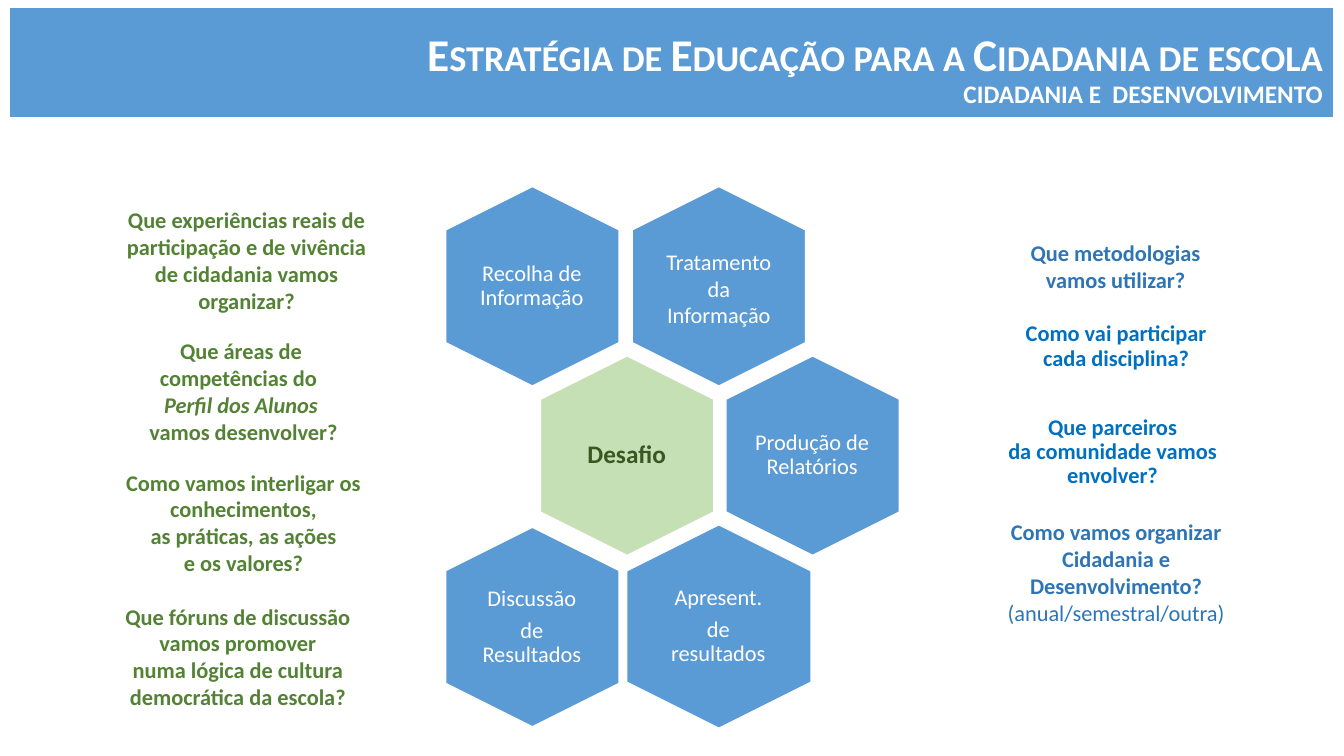
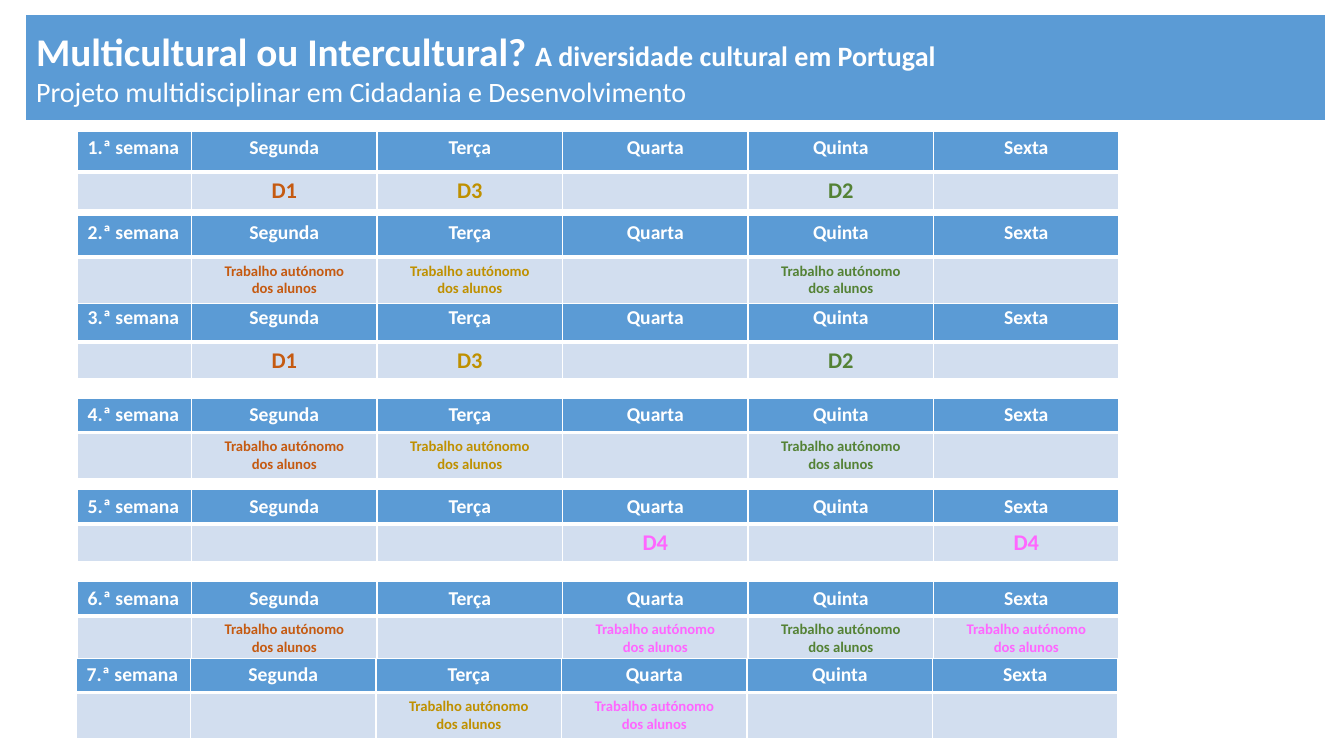
import lxml.etree
import pptx
import pptx.dml.color
import pptx.enum.shapes
import pptx.enum.text
import pptx.oxml.ns
import pptx.util

RGB = pptx.dml.color.RGBColor
ALIGN = pptx.enum.text.PP_ALIGN
ANCHOR = pptx.enum.text.MSO_ANCHOR
SHAPE = pptx.enum.shapes.MSO_SHAPE
qn = pptx.oxml.ns.qn

SCALE = 9144
FONT = "Calibri"

WHITE = RGB(0xFF, 0xFF, 0xFF)
BLUE = RGB(0x5B, 0x9B, 0xD5)
PALE = RGB(0xD2, 0xDE, 0xEF)
NAVY = RGB(0x2E, 0x75, 0xB6)
AZURE = RGB(0x00, 0x70, 0xC0)
MINT = RGB(0xC5, 0xE0, 0xB4)
DARK = RGB(0x38, 0x57, 0x23)
GREEN = RGB(0x54, 0x82, 0x35)
RUST = RGB(0xC5, 0x5A, 0x11)
GOLD = RGB(0xBF, 0x90, 0x00)
PINK = RGB(0xFF, 0x66, 0xFF)

GROUPS = {"D1": RUST, "D2": GREEN, "D3": GOLD, "D4": PINK}
DAYS = ["Segunda", "Terça", "Quarta", "Quinta", "Sexta"]
WORK = "Trabalho autónomo\vdos alunos"
COLS = [113] + [184] * len(DAYS)

WEEKS = [
    (3, 77, 298, 41, False, ("D1", "D3", "", "D2", "")),
    (4, 77, 395, 34, True, ("D1", "D3", "", "D2", "")),
    (5, 77, 486, 34, False, ("", "", "D4", "", "D4")),
    (6, 77, 577, 34, True, ("D1", "", "D4", "D2", "D4")),
    (7, 76, 653, 34, True, ("", "D3", "D4", "", "")),
    (2, 77, 214, 41, True, ("D1", "D3", "", "D2", "")),
    (1, 77, 130, 41, False, ("D1", "D3", "", "D2", "")),
]

CELLS = [
    (429, 198, 198, 172, ["Recolha de Informação"]),
    (707, 366, 198, 172, ["Produção de Relatórios"]),
    (612, 530, 202, 183, ["Apresent.", "de resultados"]),
    (429, 536, 198, 172, ["Discussão", "de Resultados"]),
]

ASKS = [
    (115, 200, 259, 118, GREEN, [
        "Que experiências reais de participação e de vivência "
        "de cidadania vamos organizar?"]),
    (115, 460, 253, 118, GREEN, [
        "Como vamos interligar os conhecimentos,",
        "as práticas, as ações", "e os valores?"]),
    (103, 593, 266, 118, GREEN, [
        "Que fóruns de discussão vamos promover\v"
        "numa lógica de cultura democrática da escola?"]),
    (1000, 232, 213, 64, NAVY, ["Que metodologias vamos utilizar?"]),
]

TIGHT = [
    (1000, 316, 214, 56, ["Como vai participar cada disciplina?"]),
    (993, 389, 221, 119, ["Que parceiros\vda comunidade vamos envolver?"]),
]


def px(num):
    return pptx.util.Emu(num * SCALE)


def box(x, y, w, h):
    return px(x), px(y), px(w), px(h)


def style(run, size, color, bold=False):
    run.font.name = FONT
    run.font.size = pptx.util.Pt(size)
    run.font.bold = bold
    run.font.color.rgb = color


def write(frame, lines, size, color, bold=False, align=ALIGN.CENTER):
    for num, line in enumerate(lines):
        para = frame.add_paragraph() if num else frame.paragraphs[0]
        para.text = line
        para.alignment = align
        for run in para.runs:
            style(run, size, color, bold)


def label(slide, area, lines, size, color, bold=False, inset=None):
    frame = slide.shapes.add_textbox(*box(*area)).text_frame
    frame.word_wrap = True
    write(frame, lines, size, color, bold)
    if inset is not None:
        frame.vertical_anchor = ANCHOR.MIDDLE
        frame.margin_left = frame.margin_right = px(inset)
        frame.margin_top = frame.margin_bottom = px(inset)
        for para in frame.paragraphs:
            para.line_spacing = 0.9
            para.space_after = pptx.util.Pt(size * 0.35)
    return frame


def solid(slide, kind, area, fill):
    shape = slide.shapes.add_shape(kind, *box(*area))
    shape.shadow.inherit = False
    shape.fill.solid()
    shape.fill.fore_color.rgb = fill
    shape.line.fill.background()
    return shape


def band(slide, area, rows, align):
    frame = solid(slide, SHAPE.RECTANGLE, area, BLUE).text_frame
    frame.word_wrap = True
    frame.vertical_anchor = ANCHOR.MIDDLE
    for num, row in enumerate(rows):
        para = frame.add_paragraph() if num else frame.paragraphs[0]
        para.alignment = align
        for text, size, bold in row:
            run = para.add_run()
            run.text = text
            style(run, size, WHITE, bold)
    return frame


def comb(slide, x, y, w, h, fill):
    shape = solid(slide, SHAPE.HEXAGON, (x, y, w, h), fill)
    shape.adjustments[0] = 0.25
    shape.adjustments[1] = 1.1547
    shape.rotation = 90
    shape.line.color.rgb = WHITE
    shape.line.width = pptx.util.Pt(1)


def inner(x, y, w, h):
    wide, tall = 115, 136
    return x + (w - wide) // 2, y + (h - tall) // 2, wide, tall


def edge(cell, base):
    props = cell._tc.get_or_add_tcPr()
    sides = [("L", 1), ("R", 1), ("T", 1), ("B", base)]
    for num, (side, width) in enumerate(sides):
        line = lxml.etree.Element(qn("a:ln" + side), w=str(width * 12700))
        fill = lxml.etree.SubElement(line, qn("a:solidFill"))
        lxml.etree.SubElement(fill, qn("a:srgbClr"), val=str(WHITE))
        props.insert(num, line)


def paint(cell, fill, base, text, size, color, align):
    cell.fill.solid()
    cell.fill.fore_color.rgb = fill
    edge(cell, base)
    write(cell.text_frame, [text], size, color, True, align)
    if not text:
        para = cell.text_frame.paragraphs[0]._p
        lxml.etree.SubElement(para, qn("a:endParaRPr"), sz="1050")


def week(slide, num, x, y, head, alone, plan):
    rows = [head, 46 if alone else 37]
    area = box(x, y, sum(COLS), sum(rows))
    table = slide.shapes.add_table(2, len(COLS), *area).table
    table.horz_banding = False
    for col, width in zip(table.columns, COLS):
        col.width = px(width)
    for row, height in zip(table.rows, rows):
        row.height = px(height)
    for col, name in enumerate([f"{num}.ª semana"] + DAYS):
        align = ALIGN.CENTER if col else ALIGN.LEFT
        paint(table.cell(0, col), BLUE, 3, name, 14, WHITE, align)
    for col, group in enumerate(("",) + plan):
        text = WORK if alone and group else group
        color = GROUPS.get(group, WHITE)
        size = 10.5 if alone else 16
        paint(table.cell(1, col), PALE, 1, text, size, color, ALIGN.CENTER)


def ideas(slide):
    frame = band(slide, (10, 8, 1312, 108), [
        [("Estratégia de Educação para a Cidadania de escola", 32.4, True)],
        [("CIDADANIA E  DESENVOLVIMENTO", 18, True)],
    ], ALIGN.RIGHT)
    frame.margin_top = px(21)
    for para in frame.paragraphs:
        para.line_spacing = 0.9
    frame.paragraphs[0].runs[0].font._element.set("cap", "small")

    comb(slide, 614, 198, 198, 172, BLUE)
    for *area, lines in CELLS:
        comb(slide, *area, BLUE)
        label(slide, inner(*area), lines, 16, WHITE, inset=0)
    core = (523, 366, 198, 172)
    comb(slide, *core, MINT)
    label(slide, inner(*core), ["Desafio"], 18, DARK, True, 0)
    label(slide, (640, 241, 146, 120), ["Tratamento da Informação"], 16, WHITE)

    for *area, lines in TIGHT:
        label(slide, area, lines, 16, AZURE, True, 6)
    for *area, color, lines in ASKS:
        label(slide, area, lines, 16, color, True)
    skills = label(slide, (103, 330, 272, 118), [
        "Que áreas de competências do ", "Perfil dos Alunos",
        " vamos desenvolver?"], 16, GREEN, True)
    skills.paragraphs[1].runs[0].font.italic = True
    terms = label(slide, (986, 509, 242, 118), [
        "Como vamos organizar Cidadania e Desenvolvimento?",
        "(anual/semestral/outra)"], 16, NAVY, True)
    terms.paragraphs[1].runs[0].font.bold = False


def weeks(slide):
    band(slide, (26, 15, 1288, 104), [
        [("Multicultural ou Intercultural? ", 28, True),
         ("A diversidade cultural em Portugal", 20, True)],
        [("Projeto multidisciplinar em Cidadania e Desenvolvimento",
          20, False)],
    ], ALIGN.LEFT)
    for item in WEEKS:
        week(slide, *item)


def main():
    deck = pptx.Presentation()
    deck.slide_width = px(1333)
    deck.slide_height = px(750)
    for build in (ideas, weeks):
        build(deck.slides.add_slide(deck.slide_layouts[6]))
    deck.save("out.pptx")


if __name__ == "__main__":
    main()
